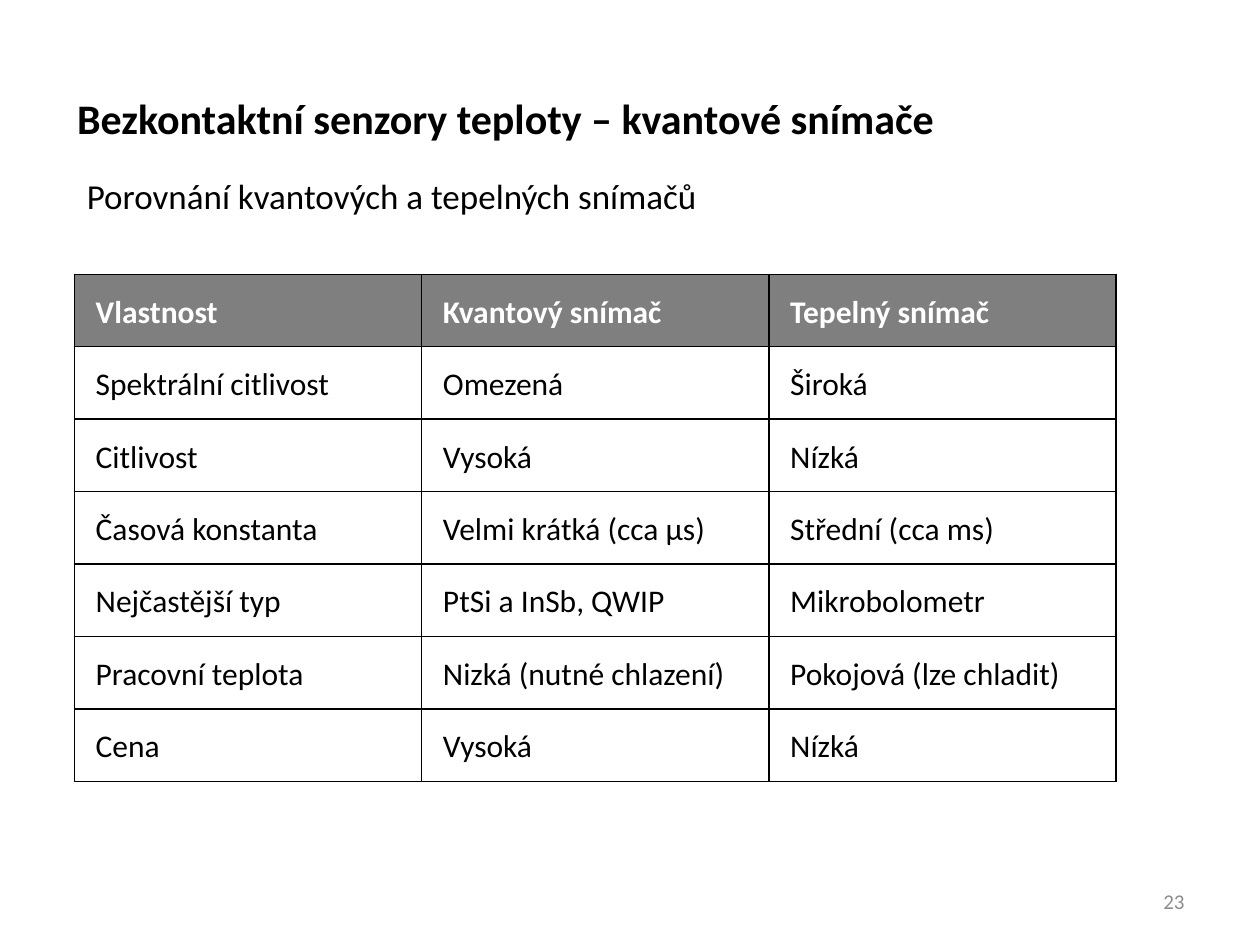
from lxml import etree
from pptx import Presentation
from pptx.dml.color import RGBColor
from pptx.enum.text import MSO_ANCHOR, PP_ALIGN
from pptx.oxml.ns import qn
from pptx.util import Cm, Pt

TOP, MIDDLE = MSO_ANCHOR.TOP, MSO_ANCHOR.MIDDLE
LEFT, RIGHT, JUSTIFY = PP_ALIGN.LEFT, PP_ALIGN.RIGHT, PP_ALIGN.JUSTIFY
FONT = "Calibri"
BLACK, WHITE, GREY, NUMBER_GREY = "000000", "FFFFFF", "7F7F7F", "8C8C8C"
TITLE_ONLY = 5
COLUMN_WIDTH, ROW_HEIGHT = 7.0, 1.46

ROWS = [
    ("Vlastnost", "Kvantový snímač", "Tepelný snímač"),
    ("Spektrální citlivost", "Omezená", "Široká"),
    ("Citlivost", "Vysoká", "Nízká"),
    ("Časová konstanta", "Velmi krátká (cca µs)", "Střední (cca ms)"),
    ("Nejčastější typ", "PtSi a InSb, QWIP", "Mikrobolometr"),
    ("Pracovní teplota", "Nizká (nutné chlazení)", "Pokojová (lze chladit)"),
    ("Cena", "Vysoká", "Nízká"),
]


def color(value):
    return RGBColor.from_string(value)


def write(text_frame, text, size, text_color=BLACK, bold=False, align=LEFT):
    paragraph = text_frame.paragraphs[0]
    paragraph.alignment = align
    run = paragraph.add_run()
    run.text = text
    run.font.name = FONT
    run.font.size = Pt(size)
    run.font.bold = bold
    run.font.color.rgb = color(text_color)
    return paragraph


def place_title(slide, text):
    title = slide.shapes.title
    title.left, title.top, title.width, title.height = Cm(1.3), Cm(1.73), Cm(22.83), Cm(1.27)
    title.text_frame.vertical_anchor = TOP
    paragraph = write(title.text_frame, text, 24, bold=True)
    paragraph.line_spacing = 1.0
    paragraph.space_before = Pt(0)


def add_text(slide, text, left, top, width, height, size, text_color=BLACK, align=LEFT, anchor=TOP):
    text_frame = slide.shapes.add_textbox(Cm(left), Cm(top), Cm(width), Cm(height)).text_frame
    text_frame.word_wrap = True
    text_frame.vertical_anchor = anchor
    write(text_frame, text, size, text_color, align=align)


def add_borders(cell):
    """Draw a thin black line on all four sides; call before setting the fill."""
    properties = cell._tc.get_or_add_tcPr()
    for side in ("lnL", "lnR", "lnT", "lnB"):
        line = etree.SubElement(properties, qn(f"a:{side}"), w=str(Pt(1)))
        fill = etree.SubElement(line, qn("a:solidFill"))
        etree.SubElement(fill, qn("a:srgbClr"), val=BLACK)


def fill_cell(cell, text, is_header):
    add_borders(cell)
    cell.fill.solid()
    cell.fill.fore_color.rgb = color(GREY if is_header else WHITE)
    cell.vertical_anchor = MIDDLE
    cell.margin_left = cell.margin_right = Cm(0.43)
    cell.margin_top = cell.margin_bottom = Cm(0.18)
    text_color = WHITE if is_header else BLACK
    paragraph = write(cell.text_frame, text, 18, text_color, is_header, JUSTIFY)
    paragraph.line_spacing = 1.1


def add_comparison_table(slide, rows, left, top):
    column_count = len(rows[0])
    table = slide.shapes.add_table(
        len(rows), column_count, Cm(left), Cm(top),
        Cm(COLUMN_WIDTH * column_count), Cm(ROW_HEIGHT * len(rows)),
    ).table
    table.horz_banding = False
    for column in table.columns:
        column.width = Cm(COLUMN_WIDTH)
    for row_index, texts in enumerate(rows):
        table.rows[row_index].height = Cm(ROW_HEIGHT)
        for column_index, text in enumerate(texts):
            fill_cell(table.cell(row_index, column_index), text, row_index == 0)


def main():
    presentation = Presentation()
    presentation.slide_width, presentation.slide_height = Cm(25.4), Cm(19.05)
    slide = presentation.slides.add_slide(presentation.slide_layouts[TITLE_ONLY])
    place_title(slide, "Bezkontaktní senzory teploty – kvantové snímače")
    add_text(slide, "Porovnání kvantových a tepelných snímačů", 1.5, 3.4, 22.6, 1.12, 20)
    add_comparison_table(slide, ROWS, 1.5, 5.53)
    add_text(slide, "23", 18.2, 17.66, 5.93, 1.01, 12, NUMBER_GREY, RIGHT, MIDDLE)
    presentation.save("out.pptx")


if __name__ == "__main__":
    main()
